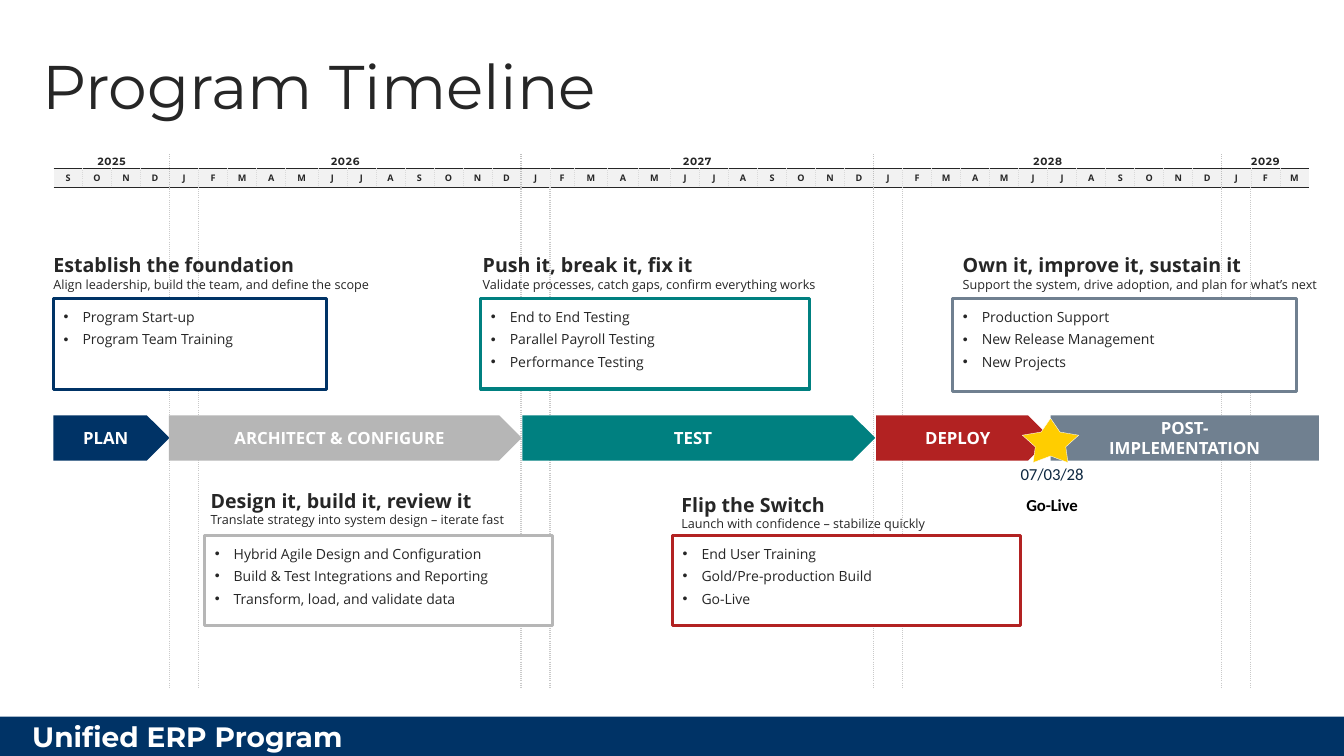
import copy
import dataclasses
import itertools

import lxml.etree
import pptx
import pptx.dml.color
import pptx.enum.shapes
import pptx.enum.text
import pptx.oxml.ns
import pptx.util

Pt = pptx.util.Pt
Kind = pptx.enum.shapes.MSO_SHAPE
Align = pptx.enum.text.PP_ALIGN
Anchor = pptx.enum.text.MSO_ANCHOR
qn = pptx.oxml.ns.qn

SLIDE_WIDTH = pptx.util.Inches(13.33)
SLIDE_HEIGHT = pptx.util.Inches(7.5)
COLOURS = {
    "navy": "003366", "silver": "B6B6B6", "teal": "008080", "red": "B22222",
    "slate": "708090", "gold": "FFCD00", "white": "FFFFFF", "ink": "262626",
    "black": "000000", "date": "0E2841", "month": "F2F2F2",
    "year_line": "BFBFBF", "month_line": "D9D9D9", "guide": "C9C9C9",
}
YEAR_MONTHS = "JFMAMJJASOND"
CALENDAR = {"2025": YEAR_MONTHS[8:], "2026": YEAR_MONTHS, "2027": YEAR_MONTHS,
            "2028": YEAR_MONTHS, "2029": YEAR_MONTHS[:3]}
MONTH_WIDTH = 2.16
ODD_MONTH_WIDTHS = {8: 2.4, 17: 1.8, 18: 2.5, 19: 2.27, 20: 2.4}
CALENDAR_ROWS = (1.87, 2.53, 66.27)
NO_GRID_STYLE = "{2D5ABB26-0587-4C30-8999-92F81FD0307C}"


@dataclasses.dataclass(frozen=True)
class Area:
    """Shares of the slide's width and height, in percent."""
    left: float
    top: float
    width: float
    height: float

    def lengths(self) -> tuple[int, int, int, int]:
        return (across(self.left), down(self.top), across(self.width), down(self.height))


@dataclasses.dataclass(frozen=True)
class Style:
    size: float
    colour: str = "ink"
    bold: bool = False
    font: str = "Open Sans"
    spacing: float = 0


@dataclasses.dataclass(frozen=True)
class Phase:
    name: str
    colour: str
    arrow_left: float
    arrow_width: float
    heading: Area
    card: Area
    headline: str
    tagline: str
    tasks: tuple[str, ...]
    card_kind: Kind = Kind.RECTANGLE
    point: float = 0.5


PHASES = (
    Phase("PLAN", "navy", 3.98, 8.63, Area(3.23, 32.8, 25.88, 6.53),
          Area(3.98, 39.47, 20.33, 12), "Establish the foundation",
          "Align leadership, build the team, and define the scope",
          ("Program Start-up", "Program Team Training"), Kind.FLOWCHART_PROCESS),
    Phase("ARCHITECT & CONFIGURE", "silver", 12.56, 26.26, Area(14.93, 64, 25.88, 6.53),
          Area(15.23, 70.8, 25.88, 12), "Design it, build it, review it",
          "Translate strategy into system design – iterate fast",
          ("Hybrid Agile Design and Configuration", "Build & Test Integrations and Reporting",
           "Transform, load, and validate data")),
    Phase("TEST", "teal", 38.86, 26.26, Area(35.18, 32.8, 27.38, 6.53),
          Area(35.78, 39.47, 24.46, 12), "Push it, break it, fix it",
          "Validate processes, catch gaps, confirm everything works",
          ("End to End Testing", "Parallel Payroll Testing", "Performance Testing")),
    Phase("DEPLOY", "red", 65.19, 12.98, Area(49.96, 64.53, 25.88, 6.53),
          Area(50.04, 70.8, 25.88, 12), "Flip the Switch",
          "Launch with confidence – stabilize quickly",
          ("End User Training", "Gold/Pre-production Build", "Go-Live")),
    Phase("POST-\vIMPLEMENTATION", "slate", 78.17, 19.95, Area(70.89, 32.8, 28.06, 6.53),
          Area(70.89, 39.47, 25.58, 12.27), "Own it, improve it, sustain it",
          "Support the system, drive adoption, and plan for what’s next",
          ("Production Support", "New Release Management", "New Projects"), point=0),
)


def across(share: float) -> int:
    return round(SLIDE_WIDTH * share / 100)


def down(share: float) -> int:
    return round(SLIDE_HEIGHT * share / 100)


def rgb(colour: str) -> pptx.dml.color.RGBColor:
    return pptx.dml.color.RGBColor.from_string(COLOURS[colour])


def write(frame, text: str, *styles: Style, align: Align = Align.LEFT) -> None:
    frame.text = text
    for para in frame.paragraphs:
        para.alignment = align
        for span, style in zip(para.runs, itertools.chain(styles, itertools.repeat(styles[-1]))):
            span.font.name = style.font
            span.font.size = Pt(style.size)
            span.font.bold = style.bold
            span.font.color.rgb = rgb(style.colour)
            if style.spacing:
                span.font._element.set("spc", str(round(style.spacing * 100)))
        for line_break in para._p.findall(qn("a:br")):
            line_break.append(copy.deepcopy(line_break.getprevious().find(qn("a:rPr"))))


def set_margins(target, horizontal: float, vertical: float) -> None:
    target.margin_left = target.margin_right = across(horizontal)
    target.margin_top = target.margin_bottom = down(vertical)


def add_text(page, area: Area, text: str, *styles: Style, align: Align = Align.LEFT):
    frame = page.shapes.add_textbox(*area.lengths()).text_frame
    frame.word_wrap = True
    write(frame, text, *styles, align=align)
    return frame


def add_block(page, kind: Kind, area: Area, fill: str, line: str = "", line_width: float = 0):
    block = page.shapes.add_shape(kind, *area.lengths())
    block.shadow.inherit = False
    block.fill.solid()
    block.fill.fore_color.rgb = rgb(fill)
    if line:
        block.line.color.rgb = rgb(line)
        block.line.width = Pt(line_width)
    else:
        block.line.fill.background()
    return block


def add_border(cell, side: str, colour: str, width: float, dash: str = "sysDot") -> None:
    border = lxml.etree.SubElement(cell._tc.get_or_add_tcPr(), qn(f"a:ln{side}"), w=str(Pt(width)))
    solid = lxml.etree.SubElement(border, qn("a:solidFill"))
    lxml.etree.SubElement(solid, qn("a:srgbClr"), val=COLOURS[colour])
    lxml.etree.SubElement(border, qn("a:prstDash"), val=dash)


def add_calendar(page) -> None:
    months = "".join(CALENDAR.values())
    widths = [ODD_MONTH_WIDTHS.get(index, MONTH_WIDTH) for index in range(len(months))]
    area = Area(3.98, 20.4, sum(widths), sum(CALENDAR_ROWS))
    table = page.shapes.add_table(len(CALENDAR_ROWS), len(months), *area.lengths()).table
    table.first_row = table.horz_banding = False
    table._tbl.tblPr.find(qn("a:tableStyleId")).text = NO_GRID_STYLE
    for column, width in zip(table.columns, widths):
        column.width = across(width)
    for row, height in zip(table.rows, CALENDAR_ROWS):
        row.height = down(height)

    ends = list(itertools.accumulate(len(letters) for letters in CALENDAR.values()))
    starts = [0] + ends[:-1]
    for year, start, end in zip(CALENDAR, starts, ends):
        cell = table.cell(0, start)
        cell.merge(table.cell(0, end - 1))
        write(cell.text_frame, year, Style(7.5, bold=True, font="Montserrat", spacing=0.5),
              align=Align.CENTER)
        set_margins(cell, 0, 0)

    for row, line_colour in enumerate(("year_line", "year_line", "guide")):
        for index, month in enumerate(months):
            cell = table.cell(row, index)
            cell.vertical_anchor = Anchor.MIDDLE
            for side, edge in (("L", index), ("R", index + 1)):
                if edge in ends[:-1]:
                    add_border(cell, side, line_colour, 1)
                elif row == 1 and 0 < edge < len(months):
                    add_border(cell, side, "month_line", 0.5)
            if row < 2:
                add_border(cell, "BT"[row], "ink", 0.75, "solid")
            if row == 1:
                write(cell.text_frame, month, Style(6.5, bold=True), align=Align.CENTER)
                set_margins(cell, 0.38, 0)
                cell.fill.solid()
                cell.fill.fore_color.rgb = rgb("month")
            else:
                cell.fill.background()


def add_arrow(page, phase: Phase) -> None:
    area = Area(phase.arrow_left, 54.93, phase.arrow_width, 6)
    arrow = add_block(page, Kind.PENTAGON, area, phase.colour)
    arrow.adjustments[0] = phase.point
    arrow.text_frame.vertical_anchor = Anchor.MIDDLE
    write(arrow.text_frame, phase.name, Style(12, "white", True), align=Align.CENTER)


def add_card(page, phase: Phase) -> None:
    card = add_block(page, phase.card_kind, phase.card, "white", phase.colour, 2.25)
    frame = card.text_frame
    frame.vertical_anchor = Anchor.TOP
    set_margins(frame, 0.75, 1.33)
    write(frame, "\n".join(phase.tasks), Style(10))
    for index, para in enumerate(frame.paragraphs):
        indent = across(1.41)
        properties = para._p.get_or_add_pPr()
        properties.set("marL", str(indent))
        properties.set("indent", str(-indent))
        lxml.etree.SubElement(properties, qn("a:buFont"), typeface="Arial")
        lxml.etree.SubElement(properties, qn("a:buChar"), char="•")
        para.space_before = Pt(2 if index else 0)
        para.space_after = Pt(2)
    add_text(page, phase.heading, f"{phase.headline}\v{phase.tagline}",
             Style(14, bold=True), Style(9))


def main() -> None:
    deck = pptx.Presentation()
    deck.slide_width, deck.slide_height = SLIDE_WIDTH, SLIDE_HEIGHT
    page = deck.slides.add_slide(deck.slide_layouts[6])

    footer = add_block(page, Kind.RECTANGLE, Area(0, 94.8, 100, 5.2), "navy").text_frame
    footer.vertical_anchor = Anchor.MIDDLE
    set_margins(footer, 2.4, 0)
    write(footer, "Unified ERP Program", Style(20, "white", True, "Montserrat"))

    title = add_text(page, Area(2.4, 3.6, 86.27, 16.4), "Program Timeline",
                     Style(44, font="Montserrat"))
    title.vertical_anchor = Anchor.MIDDLE
    title.paragraphs[0].line_spacing = 0.9

    add_calendar(page)
    for phase in PHASES:
        add_arrow(page, phase)
        add_card(page, phase)

    star = add_block(page, Kind.STAR_5_POINT, Area(76.07, 55.33, 4.2, 5.87), "gold", "white", 0.25)
    star.adjustments[0] = 0.27
    for area, text, colour, bold in (
        (Area(75.47, 61.33, 5.63, 2.67), "07/03/28", "date", False),
        (Area(73.37, 65.47, 9.83, 2.67), "Go-Live", "black", True),
    ):
        label = add_text(page, area, text, Style(12, colour, bold, "Calibri", -0.1),
                         align=Align.CENTER)
        label.vertical_anchor = Anchor.MIDDLE
        set_margins(label, 0, 0)
    deck.save("out.pptx")


if __name__ == "__main__":
    main()
